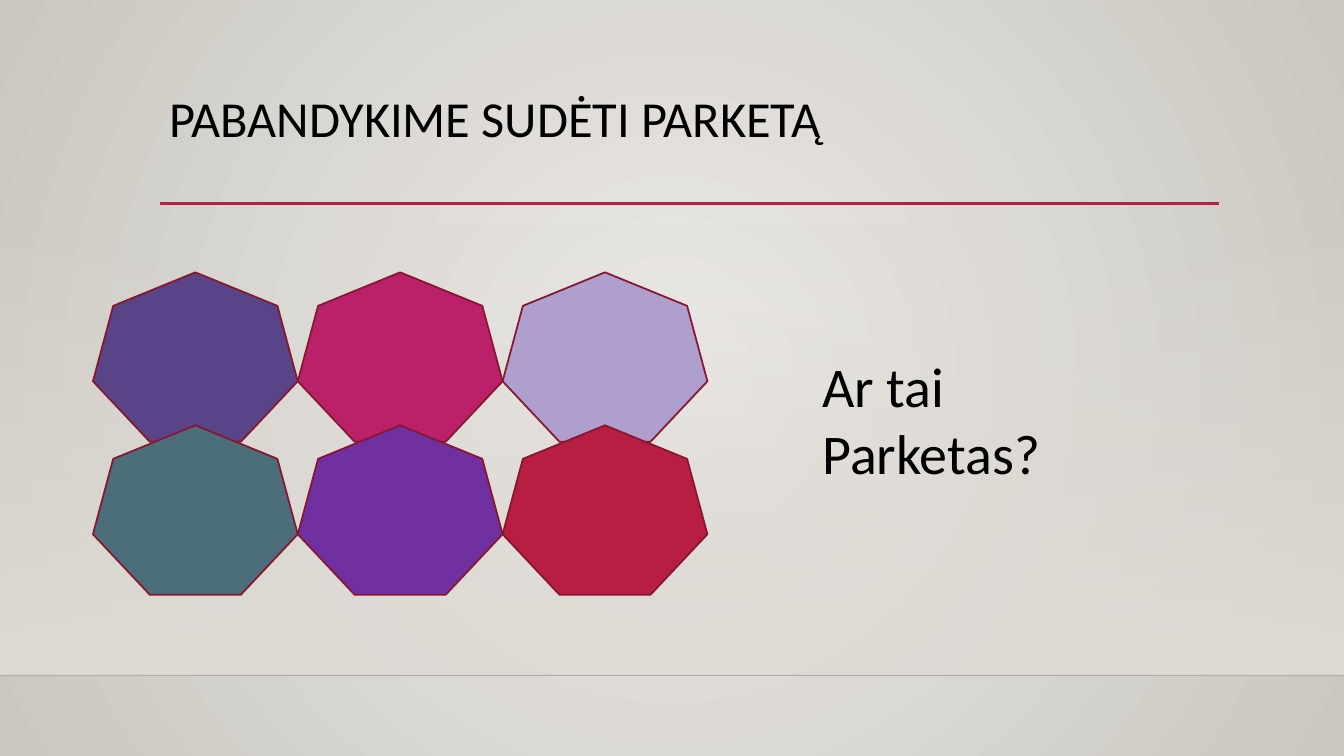
import pptx
import pptx.util
import pptx.oxml
import pptx.oxml.ns
import pptx.dml.color
import pptx.enum.shapes
import pptx.enum.text
import lxml.etree

Pt = pptx.util.Pt
Kind = pptx.enum.shapes.MSO_SHAPE
Wire = pptx.enum.shapes.MSO_CONNECTOR
qn = pptx.oxml.ns.qn

HEX = {
    "glow": "ECEAE7", "edge": "CAC7C1", "sand": "DFDBD5",
    "ink": "000000", "shelf": "000001", "red": "B71E42", "rim": "871631",
    "plum": "594487", "pink": "BA2169", "lilac": "AF9FCF",
    "teal": "4C6E7A", "purple": "7030A0",
}
RGB = {name: pptx.dml.color.RGBColor.from_string(code) for name, code in HEX.items()}


def blend(fill, first, last):
    fill.gradient()
    for stop, name, place in zip(fill.gradient_stops, (first, last), (0, 1)):
        stop.color.rgb = RGB[name]
        stop.position = place


def write(frame, lines, look):
    frame.text = "\n".join(lines)
    frame.word_wrap = True
    frame.vertical_anchor = pptx.enum.text.MSO_ANCHOR.TOP
    for para in frame.paragraphs:
        para.alignment = pptx.enum.text.PP_ALIGN.LEFT
        para.font.color.rgb = RGB["ink"]
        for key, value in look.items():
            setattr(para.font, key, value)


deck = pptx.Presentation()
deck.slide_width, deck.slide_height = Pt(960), Pt(540)
slide = deck.slides.add_slide(deck.slide_layouts[5])
shapes = slide.shapes
title = shapes.title

blend(slide.background.fill, "glow", "edge")
grad = slide.element.xpath(".//p:bgPr/a:gradFill")[0]
grad.remove(grad.find(qn("a:lin")))
ring = lxml.etree.SubElement(grad, qn("a:path"), {"path": "circle"})
lxml.etree.SubElement(ring, qn("a:fillToRect"), {side: "50000" for side in "ltrb"})

band = shapes.add_shape(Kind.RECTANGLE, Pt(0), Pt(159), Pt(960), Pt(323.5))
band.shadow.inherit = False
band.line.fill.background()
blend(band.fill, "sand", "sand")
band.fill.gradient_angle = 270

rules = []
for left, right, top, name, width in [(0, 960, 482.5, "shelf", 1), (114.3, 871, 145.3, "red", 2.5)]:
    rule = shapes.add_connector(Wire.STRAIGHT, Pt(left), Pt(top), Pt(right), Pt(top))
    rule.line.color.rgb = RGB[name]
    rule.line.width = Pt(width)
    lxml.etree.SubElement(rule.element.spPr, qn("a:effectLst"))
    rules.append(rule)

for item, share in [(band, 0), (rules[0], 20000)]:
    tint = item.element.xpath(".//a:srgbClr")[0]
    lxml.etree.SubElement(tint, qn("a:alpha"), {"val": str(share)})

for key, value in {"left": 113.8, "top": 63.4, "width": 756, "height": 83.5}.items():
    setattr(title, key, Pt(value))
write(title.text_frame, ["PABANDYKIME SUDĖTI PARKETĄ"], {"name": "Calibri", "size": Pt(36)})
title.text_frame.paragraphs[0].line_spacing = 0.9

tiles = shapes.add_group_shape()
rows = [("plum", "pink", "lilac"), ("teal", "purple", "red")]
for row, names in enumerate(rows):
    for col, name in enumerate(names):
        tile = tiles.shapes.add_shape(
            Kind.HEPTAGON, Pt(66.4 + 146.3 * col), Pt(194.5 + 109.3 * row), Pt(146.3), Pt(121))
        tile.shadow.inherit = False
        tile.fill.solid()
        tile.fill.fore_color.rgb = RGB[name]
        tile.line.color.rgb = RGB["rim"]
        tile.line.width = Pt(1.25)

ask = shapes.add_textbox(Pt(580.3), Pt(247.7), Pt(327.6), Pt(104.4))
write(ask.text_frame, ["Ar tai", "Parketas?"], {"name": "Calibri", "size": Pt(40)})

deck.save("out.pptx")
